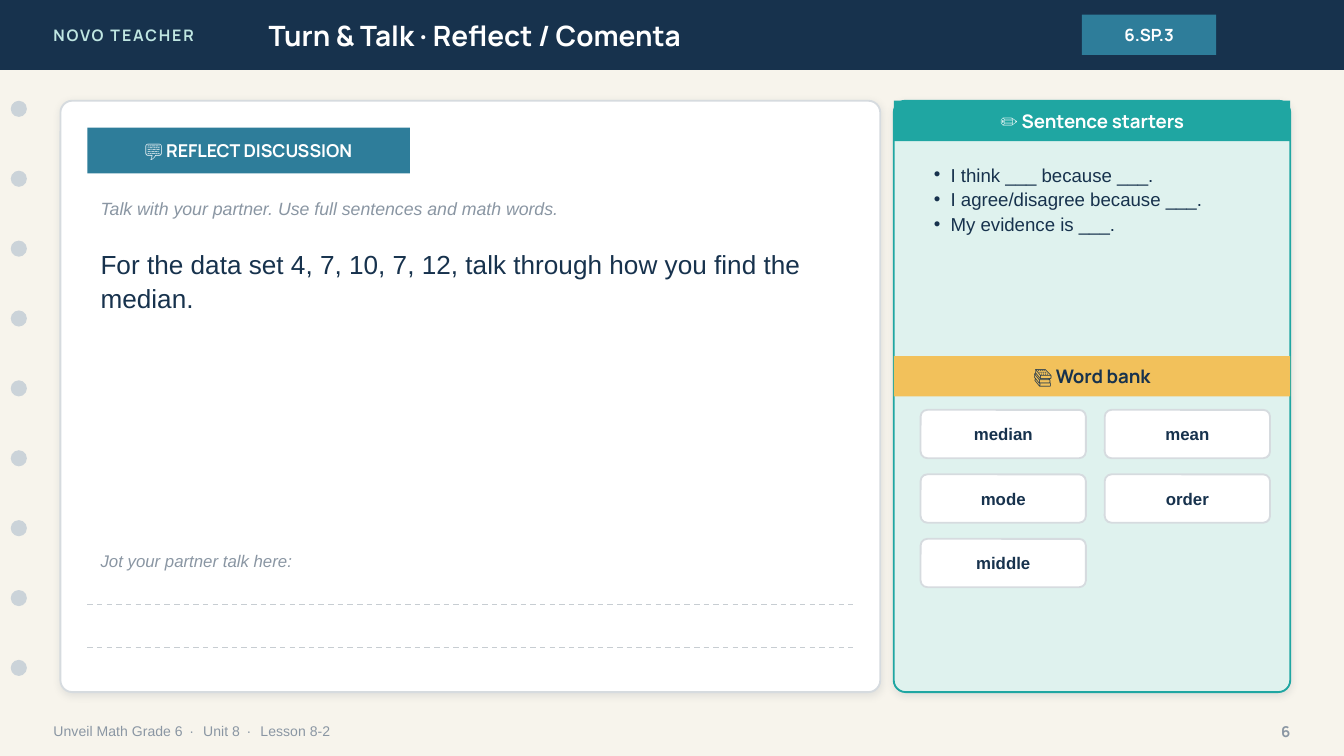
import pptx
import pptx.util
import pptx.dml.color
import pptx.enum.dml
import pptx.enum.shapes
import pptx.enum.text
import pptx.oxml
import pptx.oxml.ns

COLUMNS, ROWS = 100, 56.25
NAVY, WHITE, BLUE, TEAL = "17324D", "FFFFFF", "2E7D9A", "1FA6A2"
MINT, GOLD, GREY, EDGE = "DFF2EE", "F2C15B", "8A96A3", "D6DBDF"
HEADING, BODY = "Manrope", "Arial"
SHAPES = pptx.enum.shapes.MSO_SHAPE
ALIGN = pptx.enum.text.PP_ALIGN
ANCHOR = pptx.enum.text.MSO_ANCHOR


def color(value):
    return pptx.dml.color.RGBColor.from_string(value)


def element(parent, tag, **attributes):
    child = pptx.oxml.parse_xml(f"<a:{tag} {pptx.oxml.ns.nsdecls('a')}/>")
    for name, value in attributes.items():
        child.set(name, str(value))
    parent.append(child)
    return child


class LessonPage:
    def __init__(self, deck, background):
        self.cell_width = deck.slide_width / COLUMNS
        self.cell_height = deck.slide_height / ROWS
        self.page = deck.slides.add_slide(deck.slide_layouts[6])
        self.page.background.fill.solid()
        self.page.background.fill.fore_color.rgb = color(background)

    def across(self, columns):
        return round(columns * self.cell_width)

    def down(self, rows):
        return round(rows * self.cell_height)

    def place(self, left, top, width, height):
        return self.across(left), self.down(top), self.across(width), self.down(height)

    def add_span(self, para, text, size, font, ink, bold=False, italic=False, spacing=0):
        span = para.add_run()
        span.text = text
        span.font.size = pptx.util.Pt(size)
        span.font.name = font
        span.font.color.rgb = color(ink)
        span.font.bold = bold
        span.font.italic = italic
        if spacing:
            span._r.get_or_add_rPr().set("spc", str(round(spacing * 100)))

    def shape(self, kind, area, fill, line=None, corner=None, shadow=False):
        box = self.page.shapes.add_shape(kind, *self.place(*area))
        box.shadow.inherit = False
        box.fill.solid()
        box.fill.fore_color.rgb = color(fill)
        if line:
            box.line.color.rgb = color(line)
            box.line.width = pptx.util.Pt(1)
        else:
            box.line.fill.background()
        if corner is not None:
            box.adjustments[0] = corner
        if shadow:
            effects = box._element.spPr.find(pptx.oxml.ns.qn("a:effectLst"))
            outer = element(effects, "outerShdw", blurRad=int(pptx.util.Pt(4)),
                            dist=int(pptx.util.Pt(1)), dir=5400000, algn="bl", rotWithShape=0)
            tint = element(outer, "srgbClr", val="1C2E42")
            element(tint, "alpha", val=10000)
        return box

    def label(self, box, text, size, font, ink):
        box.text_frame.word_wrap = True
        box.text_frame.vertical_anchor = ANCHOR.MIDDLE
        para = box.text_frame.paragraphs[0]
        para.alignment = ALIGN.CENTER
        self.add_span(para, text, size, font, ink, bold=True)

    def banner(self, area, text, size, fill, ink=WHITE):
        self.label(self.shape(SHAPES.RECTANGLE, area, fill), text, size, HEADING, ink)

    def text(self, area, lines, size, font, ink, anchor=ANCHOR.MIDDLE, align=ALIGN.LEFT,
             leading=None, bullets=False, **style):
        box = self.page.shapes.add_textbox(*self.place(*area))
        frame = box.text_frame
        frame.word_wrap = True
        frame.vertical_anchor = anchor
        for index, spans in enumerate(lines):
            para = frame.add_paragraph() if index else frame.paragraphs[0]
            para.alignment = align
            if leading:
                para.line_spacing = leading
            if bullets:
                indent = self.across(1.25)
                properties = para._p.get_or_add_pPr()
                properties.set("marL", str(indent))
                properties.set("indent", str(-indent))
                element(properties, "buFont", typeface=BODY)
                element(properties, "buChar", char="•")
            for words, spacing in spans:
                self.add_span(para, words, size, font, ink, spacing=spacing, **style)

    def rule(self, left, right, row):
        line = self.page.shapes.add_connector(
            pptx.enum.shapes.MSO_CONNECTOR.STRAIGHT,
            self.across(left), self.down(row), self.across(right), self.down(row))
        line.line.color.rgb = color("C7CDD2")
        line.line.width = pptx.util.Pt(0.75)
        line.line.dash_style = pptx.enum.dml.MSO_LINE.DASH
        element(line._element.spPr, "effectLst")


def main():
    deck = pptx.Presentation()
    deck.slide_width = pptx.util.Inches(10)
    deck.slide_height = pptx.util.Inches(5.625)
    lesson = LessonPage(deck, "F7F4EC")

    lesson.shape(SHAPES.RECTANGLE, (0, 0, COLUMNS, 5.2), NAVY)
    lesson.text((3, 0, 24, 5.2), [[("NOVO TEACHER", 1)]], 8.5, HEADING, "BFE6E2", bold=True)
    lesson.text((19, 0, 56, 5.2), [[("Turn & Talk · Reflect / Comenta", 0)]],
                15, HEADING, WHITE, bold=True)
    lesson.banner((80.5, 1.1, 10, 3), "6.SP.3", 9, BLUE)

    for hole in range(9):
        lesson.shape(SHAPES.OVAL, (0.8, 7.5 + 5.2 * hole, 1.2, 1.2), "CBD3D9")

    separator = (" · ", 1.4)
    footer = [("Unveil Math Grade 6", 0), separator, ("Unit 8", 0), separator, ("Lesson 8-2", 0)]
    lesson.text((3, 53, 70, 2.8), [footer], 7.5, BODY, GREY)
    lesson.text((92, 53, 5, 2.8), [[("6", 0)]], 8, HEADING, GREY, align=ALIGN.RIGHT, bold=True)

    lesson.shape(SHAPES.ROUNDED_RECTANGLE, (4.5, 7.5, 61, 44), WHITE, EDGE, 0.02, True)
    lesson.banner((6.5, 9.5, 24, 3.4), "💬 REFLECT DISCUSSION", 9.5, BLUE)
    lesson.text((6.5, 14, 57, 3),
                [[("Talk with your partner. Use full sentences and math words.", 0)]],
                9.5, BODY, GREY, italic=True)
    lesson.text((6.5, 17.8, 57, 20),
                [[("For the data set 4, 7, 10, 7, 12, talk through how you find the median.", 0)]],
                14, BODY, NAVY, anchor=ANCHOR.TOP, leading=1.08)
    lesson.text((6.5, 40.5, 57, 2.5), [[("Jot your partner talk here:", 0)]],
                9, BODY, GREY, italic=True)
    for row in (45, 48.2):
        lesson.rule(6.5, 63.5, row)

    lesson.shape(SHAPES.ROUNDED_RECTANGLE, (66.5, 7.5, 29.5, 44), MINT, TEAL, 0.03, True)
    lesson.banner((66.5, 7.5, 29.5, 3), "✏️ Sentence starters", 10, TEAL)
    starters = ["I think ___ because ___.", "I agree/disagree because ___.", "My evidence is ___."]
    lesson.text((68.5, 11.5, 26, 14), [[(starter, 0)] for starter in starters],
                10, BODY, NAVY, anchor=ANCHOR.TOP, leading=1.1, bullets=True)

    lesson.banner((66.5, 26.5, 29.5, 3), "📚 Word bank", 10, GOLD, NAVY)
    for index, word in enumerate(["median", "mean", "mode", "order", "middle"]):
        row, column = divmod(index, 2)
        area = (68.5 + 13.7 * column, 30.5 + 4.8 * row, 12.3, 3.6)
        card = lesson.shape(SHAPES.ROUNDED_RECTANGLE, area, WHITE, EDGE, 0.14)
        lesson.label(card, word, 9, BODY, NAVY)

    deck.save("out.pptx")


if __name__ == "__main__":
    main()
